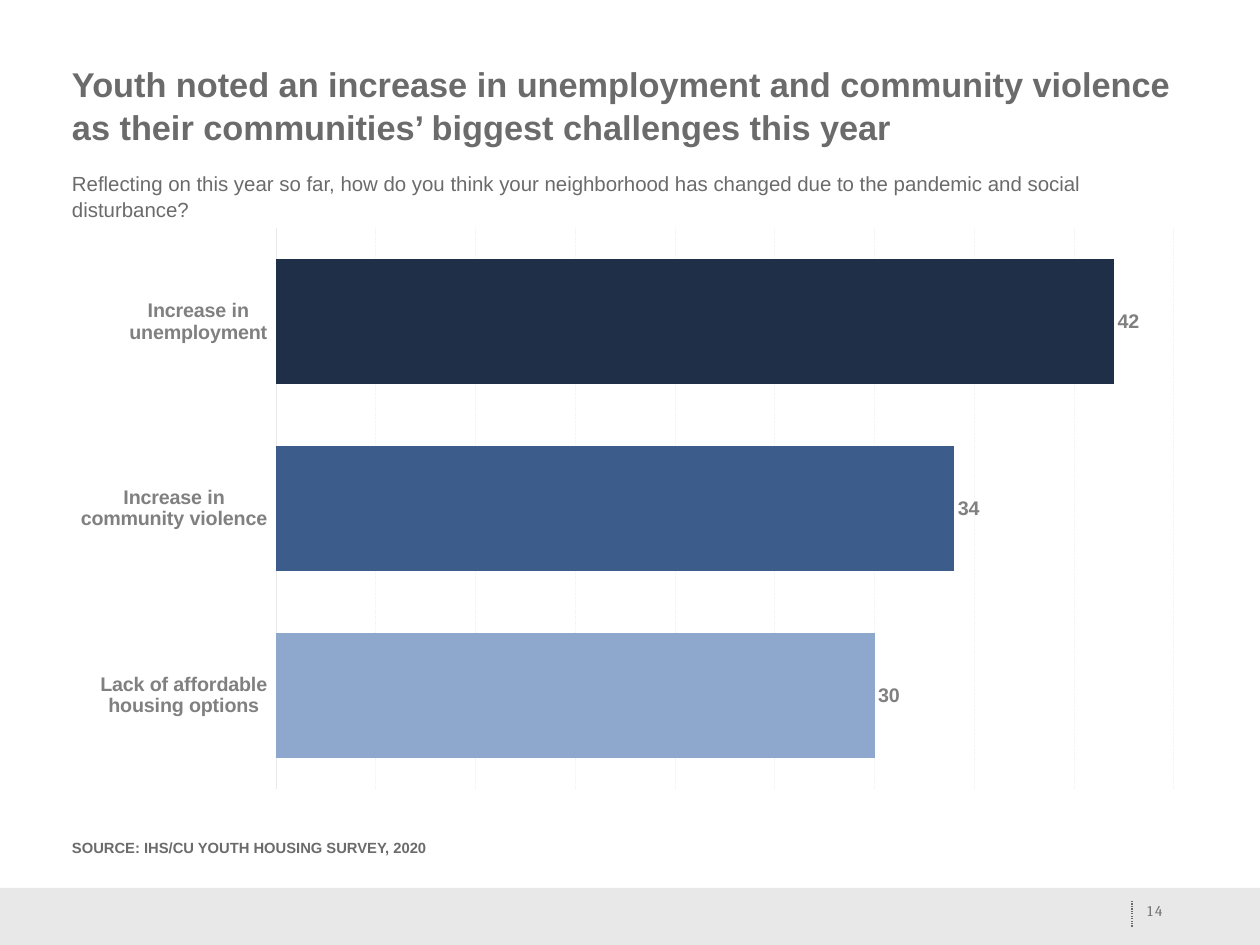
from lxml import etree
from pptx import Presentation
from pptx.chart.data import CategoryChartData
from pptx.dml.color import RGBColor
from pptx.enum.chart import XL_CHART_TYPE, XL_LABEL_POSITION, XL_TICK_LABEL_POSITION, XL_TICK_MARK
from pptx.enum.dml import MSO_LINE
from pptx.enum.shapes import MSO_CONNECTOR, MSO_SHAPE
from pptx.enum.text import MSO_ANCHOR, MSO_AUTO_SIZE, PP_ALIGN
from pptx.oxml import parse_xml
from pptx.oxml.ns import nsdecls, qn
from pptx.util import Pt

BAR = XL_CHART_TYPE.BAR_CLUSTERED
OUTSIDE_END = XL_LABEL_POSITION.OUTSIDE_END
LABELS_LOW = XL_TICK_LABEL_POSITION.LOW
NO_TICKS = XL_TICK_MARK.NONE
DOTTED = MSO_LINE.ROUND_DOT
STRAIGHT = MSO_CONNECTOR.STRAIGHT
RECTANGLE = MSO_SHAPE.RECTANGLE
TOP, BOTTOM = MSO_ANCHOR.TOP, MSO_ANCHOR.BOTTOM
LEFT, CENTER = PP_ALIGN.LEFT, PP_ALIGN.CENTER
NO_FIT = MSO_AUTO_SIZE.NONE

SCALE = 10320  # EMU per px
WIDTH, HEIGHT = 1260, 945
COLORS = {
    "text": "6B6B6B", "label": "808080", "axis": "E9E9E9", "grid": "F2F2F2",
    "footer": "E8E8E8", "navy": "1F2F47", "blue": "3C5C8C", "sky": "8DA7CD",
}
CHALLENGES = [
    ("Increase in\nunemployment", 42, "navy"),
    ("Increase in\ncommunity violence", 34, "blue"),
    ("Lack of affordable\nhousing options", 30, "sky"),
]


def px(*lengths):
    return [round(length * SCALE) for length in lengths]


def color(name):
    return RGBColor.from_string(COLORS[name])


def style_font(font, size, name="text", bold=False, face="Arial"):
    font.name, font.size, font.bold = face, Pt(size), bold
    font.color.rgb = color(name)


def style_line(line, name, width, dash=None):
    line.color.rgb = color(name)
    line.width = Pt(width)
    if dash:
        line.dash_style = dash


def write(shape, box, text, size, bold=False, face="Arial", align=LEFT,
          anchor=TOP, spacing=1.0, tracking=0, inset=(9, 4)):
    shape.left, shape.top, shape.width, shape.height = px(*box)
    frame = shape.text_frame
    frame.word_wrap, frame.auto_size, frame.vertical_anchor = True, NO_FIT, anchor
    frame.margin_left, frame.margin_top = frame.margin_right, frame.margin_bottom = px(*inset)
    paragraph = frame.paragraphs[0]
    properties = paragraph._p.get_or_add_pPr()
    properties.set("marL", "0")
    properties.set("indent", "0")
    etree.SubElement(properties, qn("a:buNone"))
    paragraph.alignment, paragraph.line_spacing = align, spacing
    paragraph.space_before = Pt(0)
    run = paragraph.add_run()
    run.text = text
    style_font(run.font, size, bold=bold, face=face)
    if tracking:
        run._r.get_or_add_rPr().set("spc", str(tracking * 100))


def add_footer(slide, box):
    x, y, w, h = box
    band = slide.shapes.add_shape(RECTANGLE, *px(*box))
    band.shadow.inherit = False
    band.fill.solid()
    band.fill.fore_color.rgb = color("footer")
    band.line.fill.background()

    # Divider and page number
    divider_x = x + w - 128
    divider = slide.shapes.add_connector(
        STRAIGHT, *px(divider_x, y + 13, divider_x, y + 39))
    style_line(divider.line, "text", 1, DOTTED)
    etree.SubElement(divider._element.spPr, qn("a:effectLst"))
    number_box = (divider_x + 7, y - 19, 32, 51)
    write(slide.shapes.add_textbox(*px(*number_box)), number_box, "14", 12,
          face="Cambria", align=CENTER, anchor=BOTTOM, spacing=1.5,
          tracking=2, inset=(0, 0))


def add_texts(slide, box):
    x, y, w, h = box
    title, question, source = slide.placeholders
    write(title, (x, y, w, 90),
          "Youth noted an increase in unemployment and community violence "
          "as their communities’ biggest challenges this year",
          27.9, bold=True, spacing=1.04)
    write(question, (x, y + 108, w, 52),
          "Reflecting on this year so far, how do you think your neighborhood "
          "has changed due to the pandemic and social disturbance?",
          16.6, spacing=1.05)
    write(source, (x, y + h - 53, w, 53),
          "SOURCE: IHS/CU YOUTH HOUSING SURVEY, 2020", 12, bold=True)


def add_challenge_chart(slide, box):
    names, values, fills = zip(*CHALLENGES)
    data = CategoryChartData()
    data.categories = names
    data.add_series("Series 1", values)
    chart = slide.shapes.add_chart(BAR, *px(*box), data).chart
    chart.has_legend = chart.has_title = False
    style_font(chart.font, 10)

    # Axes
    categories = chart.category_axis
    categories.reverse_order = True
    categories.major_tick_mark = categories.minor_tick_mark = NO_TICKS
    categories.tick_label_position = LABELS_LOW
    categories.has_major_gridlines = False
    style_font(categories.tick_labels.font, 16, "label", bold=True)
    style_line(categories.format.line, "axis", 0.75)
    scale = chart.value_axis
    scale.minimum_scale, scale.maximum_scale, scale.major_unit = 0, 45, 5
    scale.has_major_gridlines = True
    style_line(scale.major_gridlines.format.line, "grid", 0.75, DOTTED)
    scale.visible = False

    # Bars and values
    plot = chart.plots[0]
    plot.gap_width, plot.vary_by_categories = 50, False
    series = plot.series[0]
    for index, fill in enumerate(fills):
        bar = series.points[index].format.fill
        bar.solid()
        bar.fore_color.rgb = color(fill)
    labels = series.data_labels
    labels.show_value, labels.position = True, OUTSIDE_END
    style_font(labels.font, 16, "label", bold=True)

    # Plot area, leaving room for the category names
    w, h = box[2:]
    parts = {"x": 213 / w, "y": 12 / h, "w": 898 / w, "h": 561 / h}
    sizes = "".join(f'<c:{key}Mode val="edge"/>' for key in "xy")
    sizes += "".join(f'<c:{key} val="{part:.4f}"/>' for key, part in parts.items())
    area = chart._chartSpace.chart.plotArea
    for old in area.findall(qn("c:layout")):
        area.remove(old)
    area.insert(0, parse_xml(
        f'<c:layout {nsdecls("c")}><c:manualLayout><c:layoutTarget val="inner"/>'
        f'{sizes}</c:manualLayout></c:layout>'))


def main():
    presentation = Presentation()
    presentation.slide_width, presentation.slide_height = px(WIDTH, HEIGHT)
    slide = presentation.slides.add_slide(presentation.slide_layouts[3])
    add_texts(slide, (63, 58, 1134, 830))
    add_challenge_chart(slide, (63, 216, 1134, 585))
    add_footer(slide, (0, 888, WIDTH, 57))
    presentation.save("out.pptx")


if __name__ == "__main__":
    main()
